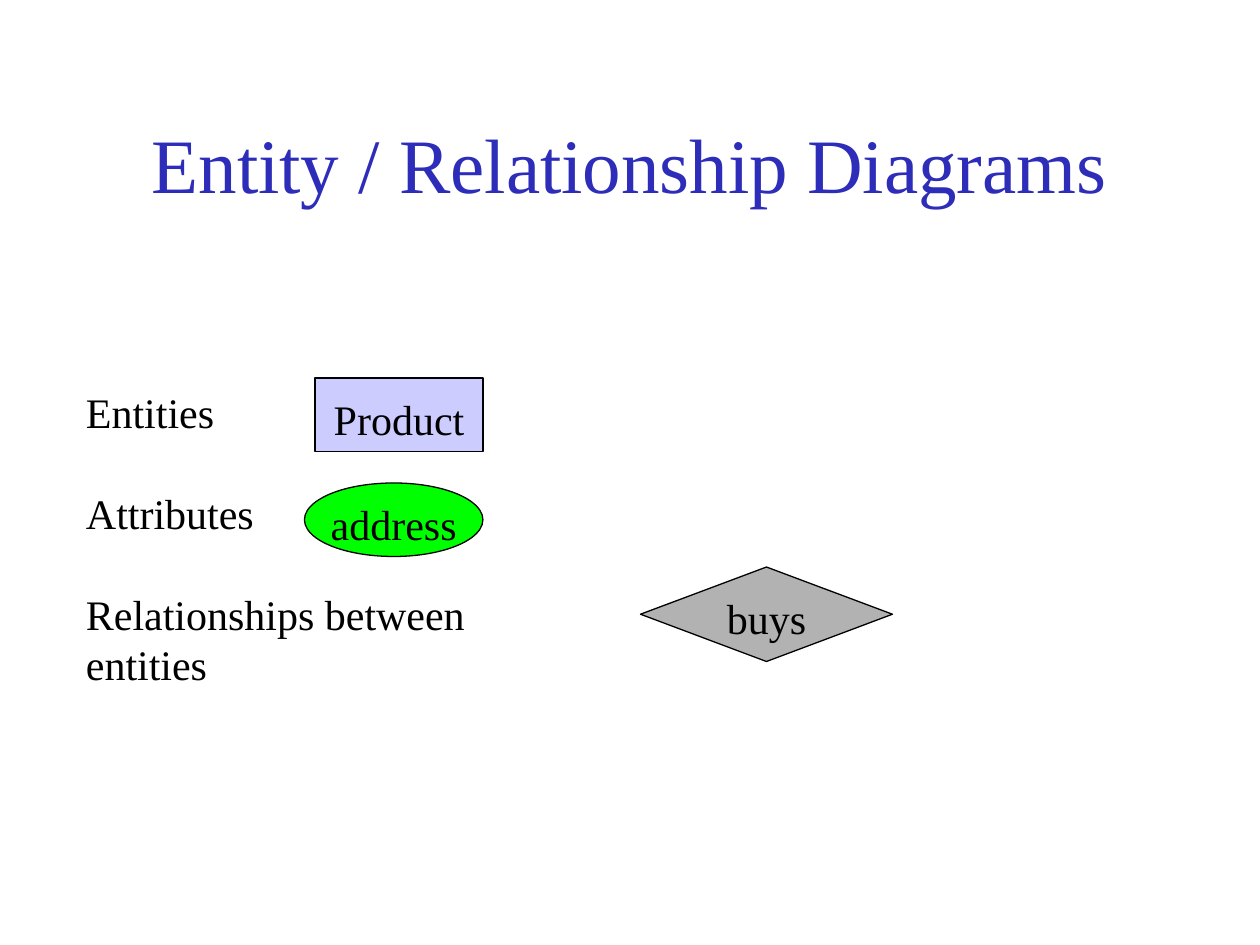
from dataclasses import dataclass

from pptx import Presentation
from pptx.dml.color import RGBColor
from pptx.enum.shapes import MSO_SHAPE
from pptx.enum.text import MSO_ANCHOR, PP_ALIGN
from pptx.util import Pt

RECT, OVAL, DIAMOND = MSO_SHAPE.RECTANGLE, MSO_SHAPE.OVAL, MSO_SHAPE.DIAMOND
TOP, MIDDLE = MSO_ANCHOR.TOP, MSO_ANCHOR.MIDDLE
LEFT, CENTER = PP_ALIGN.LEFT, PP_ALIGN.CENTER
FONT = "Times New Roman"
BLACK, BLUE = "000000", "2D2DB9"
BODY_SIZE = 24
LINE_PITCH = 1.2 * BODY_SIZE


@dataclass
class Symbol:
    kind: MSO_SHAPE
    text: str
    left: float
    top: float
    width: float
    height: float
    fill: str


SYMBOLS = [
    Symbol(RECT, "Product", 180, 216, 96, 42, "CCCCFF"),
    Symbol(OVAL, "address", 174, 276, 102, 42, "00FF00"),
    Symbol(DIAMOND, "buys", 366, 324, 144, 54, "B2B2B2"),
]
LABELS = ["Entities", "Attributes", "Relationships between entities"]


def rgb(value: str) -> RGBColor:
    return RGBColor.from_string(value)


def write(tf, lines: list[str], size: float, color: str, align, anchor) -> None:
    tf.text = "\n".join(lines)
    tf.vertical_anchor = anchor
    for p in tf.paragraphs:
        p.alignment = align
        for r in p.runs:
            r.font.name, r.font.size = FONT, Pt(size)
            r.font.color.rgb = rgb(color)


def add_text(s, lines: list[str], left: float, top: float, width: float,
             height: float, size: float, color: str, align, anchor):
    box = s.shapes.add_textbox(Pt(left), Pt(top), Pt(width), Pt(height))
    tf = box.text_frame
    tf.word_wrap = True
    write(tf, lines, size, color, align, anchor)
    return tf


def add_symbol(s, sym: Symbol) -> None:
    sp = s.shapes.add_shape(sym.kind, Pt(sym.left), Pt(sym.top),
                            Pt(sym.width), Pt(sym.height))
    sp.shadow.inherit = False
    sp.fill.solid()
    sp.fill.fore_color.rgb = rgb(sym.fill)
    sp.line.color.rgb = rgb(BLACK)
    sp.line.width = Pt(0.75)
    tf = sp.text_frame
    tf.word_wrap = False
    tf.margin_top = Pt(8)
    write(tf, [sym.text], BODY_SIZE, BLACK, CENTER, MIDDLE)


def main() -> None:
    prs = Presentation()
    prs.slide_width, prs.slide_height = Pt(720), Pt(540)
    s = prs.slides.add_slide(prs.slide_layouts[6])

    # Title
    add_text(s, ["Entity / Relationship Diagrams"], 54, 48, 612, 90,
             44, BLUE, CENTER, MIDDLE)

    # Names of the diagram parts, one line apart
    tf = add_text(s, LABELS, 42, 216, 306, 209, BODY_SIZE, BLACK, LEFT, TOP)
    tf.margin_top, tf.margin_right = Pt(5), Pt(20)
    for p in tf.paragraphs:
        p.line_spacing = Pt(LINE_PITCH)
        p.space_after = Pt(LINE_PITCH)

    # Symbols
    for sym in SYMBOLS:
        add_symbol(s, sym)

    prs.save("out.pptx")


if __name__ == "__main__":
    main()
